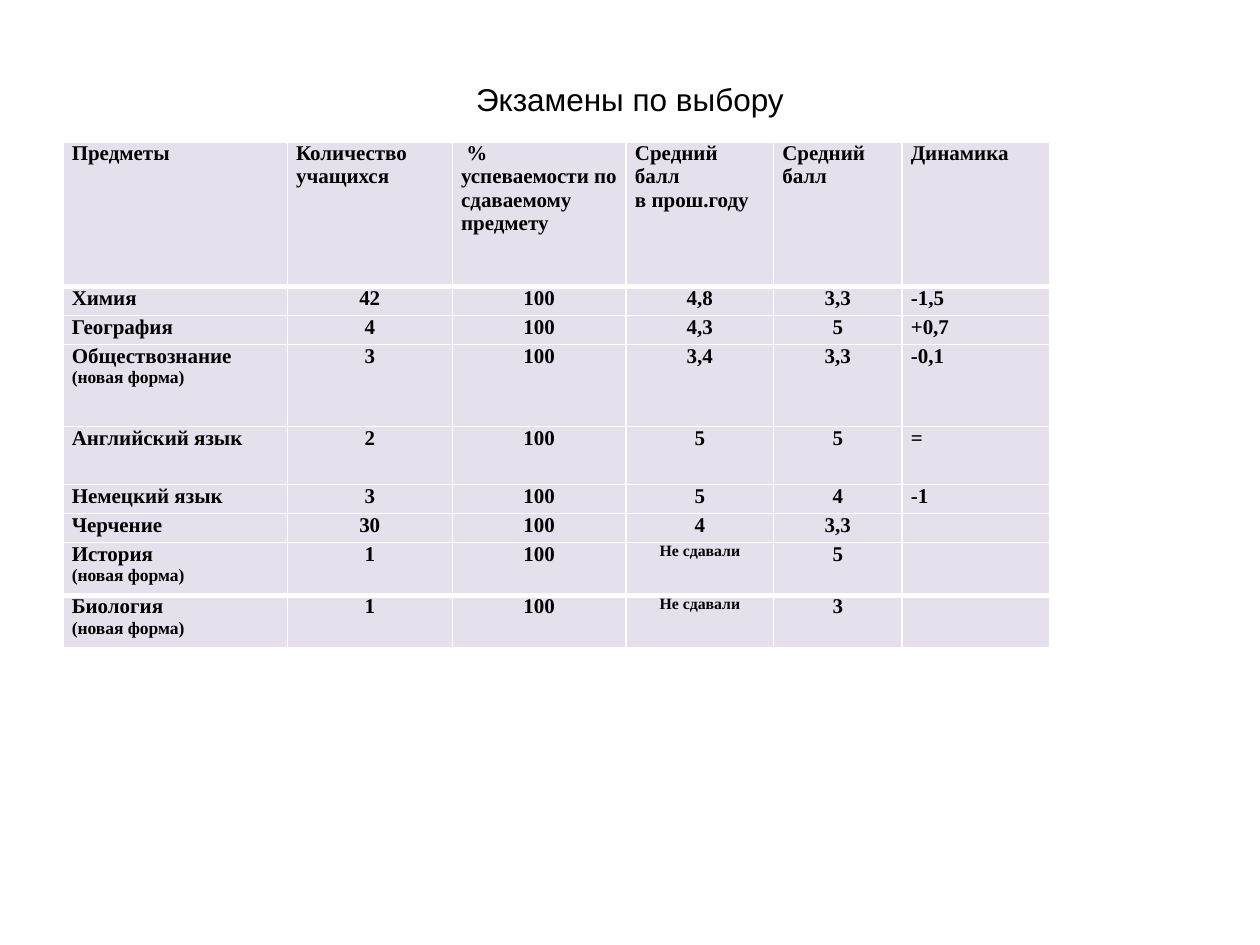
from lxml import etree
from pptx import Presentation
from pptx.dml.color import RGBColor
from pptx.enum.text import MSO_ANCHOR, PP_ALIGN
from pptx.oxml.ns import qn
from pptx.util import Inches, Pt

CENTER, LEFT = PP_ALIGN.CENTER, PP_ALIGN.LEFT
MIDDLE, TOP = MSO_ANCHOR.MIDDLE, MSO_ANCHOR.TOP
BLACK = RGBColor(0x00, 0x00, 0x00)
WHITE = RGBColor(0xFF, 0xFF, 0xFF)
LAVENDER = RGBColor(0xE6, 0xE0, 0xEC)
WIDTH, HEIGHT = 10, 7.5

COLUMNS = [1.78, 1.31, 1.38, 1.17, 1.02, 1.17]
ROWS = [1.15, 0.23, 0.23, 0.65, 0.46, 0.23, 0.23, 0.42, 0.42]
THICK_RULES = {1, 8}  # row boundaries drawn with a heavier line
CENTERED_COLUMNS = range(1, 5)
NEW_FORM, NOT_TAKEN = "(новая форма)", "Не сдавали"
SMALL_SIZES = {NEW_FORM: 10, NOT_TAKEN: 9}

EXAMS = [
    ["Предметы", "Количество\nучащихся", " % успеваемости по сдаваемому предмету",
     "Средний балл\nв прош.году", "Средний балл", "Динамика"],
    ["Химия", "42", "100", "4,8", "3,3", "-1,5"],
    ["География", "4", "100", "4,3", "5", "+0,7"],
    [f"Обществознание\n{NEW_FORM}", "3", "100", "3,4", "3,3", "-0,1"],
    ["Английский язык", "2", "100", "5", "5", "="],
    ["Немецкий язык", "3", "100", "5", "4", "-1"],
    ["Черчение", "30", "100", "4", "3,3", ""],
    [f"История\n{NEW_FORM}", "1", "100", NOT_TAKEN, "5", ""],
    [f"Биология\n{NEW_FORM}", "1", "100", NOT_TAKEN, "3", ""],
]


class ExamPage:
    title_font, table_font = "Arial", "Times New Roman"
    title_size, table_size = 18, 12

    def __init__(self, deck):
        self.page = deck.slides.add_slide(deck.slide_layouts[6])

    def span(self, para, text, font, size, bold=False):
        span = para.add_run()
        span.text = text
        span.font.name = font
        span.font.size = Pt(size)
        span.font.bold = bold
        span.font.color.rgb = BLACK

    def title(self, text, left, top, width, height):
        """Place a centred title; lengths are shares of the slide."""
        box = self.page.shapes.add_textbox(
            Inches(left * WIDTH), Inches(top * HEIGHT),
            Inches(width * WIDTH), Inches(height * HEIGHT))
        frame = box.text_frame
        frame.word_wrap = True
        frame.vertical_anchor = MIDDLE
        para = frame.paragraphs[0]
        para.alignment = CENTER
        self.span(para, text, self.title_font, self.title_size)

    def borders(self, cell, row):
        properties = cell._tc.get_or_add_tcPr()
        top, bottom = (3 if edge in THICK_RULES else 1 for edge in (row, row + 1))
        sides = [("a:lnL", 1), ("a:lnR", 1), ("a:lnT", top), ("a:lnB", bottom)]
        for position, (side, points) in enumerate(sides):
            line = etree.Element(qn(side), w=str(Pt(points)))
            fill = etree.SubElement(line, qn("a:solidFill"))
            etree.SubElement(fill, qn("a:srgbClr"), val=str(WHITE))
            properties.insert(position, line)

    def cell(self, cell, text, row, column):
        cell.margin_left = cell.margin_right = Inches(0.07)
        cell.margin_top = cell.margin_bottom = 0
        cell.vertical_anchor = TOP
        cell.fill.solid()
        cell.fill.fore_color.rgb = LAVENDER
        self.borders(cell, row)
        frame = cell.text_frame
        for index, line in enumerate(text.split("\n")):
            para = frame.add_paragraph() if index else frame.paragraphs[0]
            para.alignment = CENTER if row and column in CENTERED_COLUMNS else LEFT
            if line.startswith(" "):
                para._p.get_or_add_pPr().set("indent", str(Inches(-0.08)))
            if line:
                size = SMALL_SIZES.get(line, self.table_size)
                self.span(para, line, self.table_font, size, bold=True)
            else:  # keeps an empty cell from stretching its row
                etree.SubElement(para._p, qn("a:endParaRPr"),
                                 sz=str(self.table_size * 100))

    def table(self, rows, left, top):
        """Place the table; left and top are shares of the slide."""
        table = self.page.shapes.add_table(
            len(ROWS), len(COLUMNS), Inches(left * WIDTH), Inches(top * HEIGHT),
            Inches(sum(COLUMNS)), Inches(sum(ROWS))).table
        table.horz_banding = False
        for column, width in zip(table.columns, COLUMNS):
            column.width = Inches(width)
        for row, height in zip(table.rows, ROWS):
            row.height = Inches(height)
        for row, texts in enumerate(rows):
            for column, text in enumerate(texts):
                self.cell(table.cell(row, column), text, row, column)


def main():
    deck = Presentation()
    deck.slide_width, deck.slide_height = Inches(WIDTH), Inches(HEIGHT)
    page = ExamPage(deck)
    page.title("Экзамены по выбору", 0.05, 0.07, 0.9, 0.07)
    page.table(EXAMS, 0.05, 0.15)
    deck.save("out.pptx")


if __name__ == "__main__":
    main()
